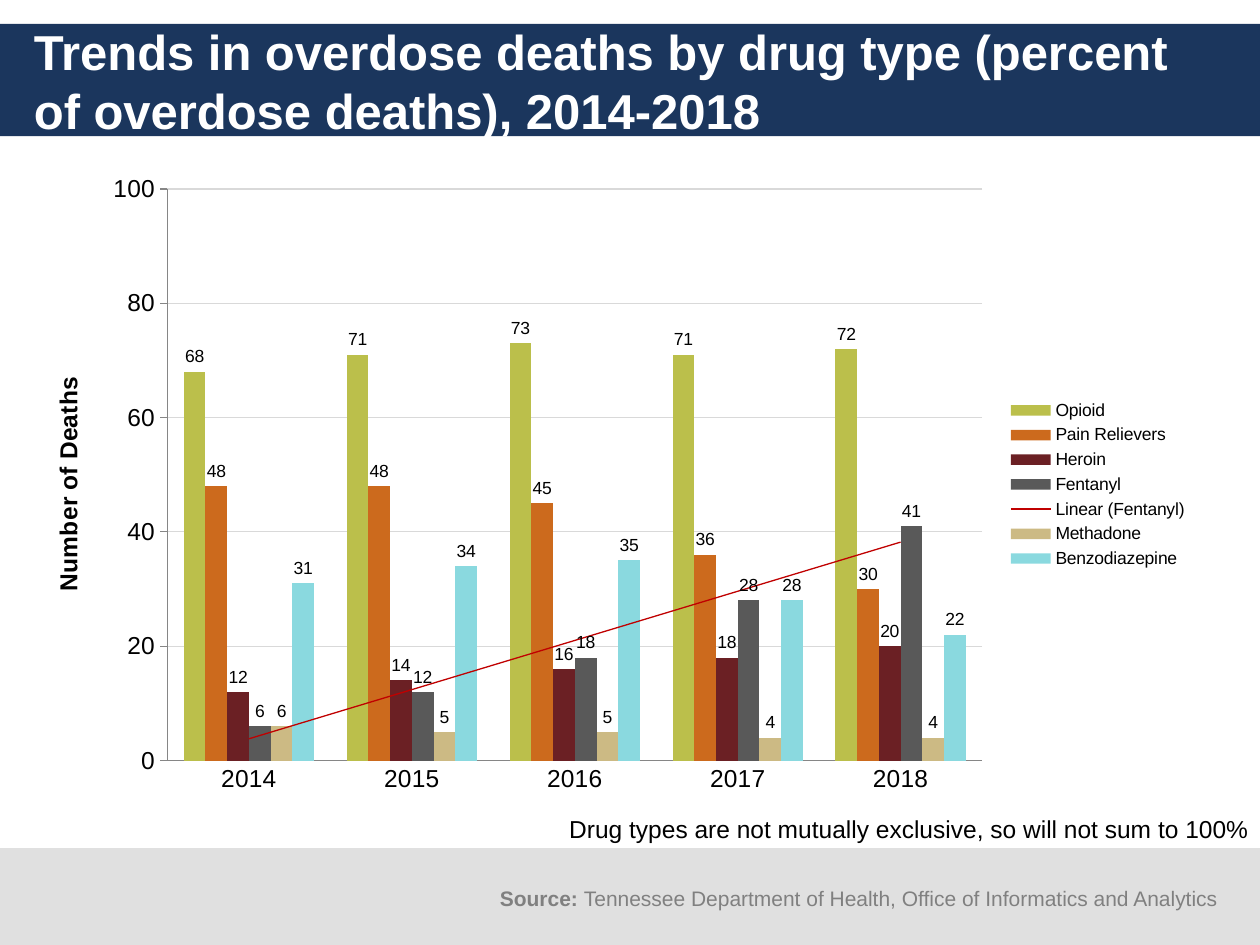
from lxml import etree
from pptx import Presentation
from pptx import util as u
from pptx.chart.data import CategoryChartData
from pptx.dml.color import RGBColor
from pptx.enum import chart as ch, shapes, text
from pptx.oxml import parse_xml
from pptx.oxml.ns import nsdecls

Pt = u.Pt
FONT = "Arial"
NAVY = RGBColor(0x1B, 0x36, 0x5D)
PALE = RGBColor(0xE0, 0xE0, 0xE0)
GRAY = RGBColor(0x80, 0x80, 0x80)
AXIS = RGBColor(0x86, 0x86, 0x86)
GRID = RGBColor(0xD9, 0xD9, 0xD9)
WHITE = RGBColor(0xFF, 0xFF, 0xFF)
BLACK = RGBColor(0, 0, 0)

YEARS = ["2014", "2015", "2016", "2017", "2018"]
DRUGS = [
    ("Opioid ", (68, 71, 73, 71, 72), RGBColor(0xBB, 0xBF, 0x4B)),
    ("Pain Relievers ", (48, 48, 45, 36, 30), RGBColor(0xCC, 0x6A, 0x1D)),
    ("Heroin", (12, 14, 16, 18, 20), RGBColor(0x6B, 0x20, 0x24)),
    ("Fentanyl", (6, 12, 18, 28, 41), RGBColor(0x59, 0x59, 0x59)),
    ("Methadone", (6, 5, 5, 4, 4), RGBColor(0xCC, 0xBA, 0x84)),
    ("Benzodiazepine", (31, 34, 35, 28, 22), RGBColor(0x8A, 0xD9, 0xDF)),
]


def style(font, size, color, bold=False):
    font.name, font.size, font.bold = FONT, Pt(size), bold
    font.color.rgb = color


prs = Presentation()
prs.slide_width, prs.slide_height = Pt(720), Pt(540)
slide = prs.slides.add_slide(prs.slide_layouts[5])

# Bands, kept behind the title
tree = slide.shapes.title.element.getparent()
for spot, (top, high, color) in enumerate([(13.7, 64.1, NAVY), (484.6, 55.4, PALE)]):
    band = slide.shapes.add_shape(
        shapes.MSO_SHAPE.RECTANGLE, Pt(0), Pt(top), Pt(720), Pt(high))
    band.shadow.inherit = False
    band.fill.solid()
    band.fill.fore_color.rgb = color
    band.line.fill.background()
    tree.insert(2 + spot, band.element)

title = slide.shapes.title
title.left, title.top, title.width, title.height = Pt(12.2), Pt(13.7), Pt(696), Pt(64.8)
frame = title.text_frame
frame.text = "Trends in overdose deaths by drug type (percent of overdose deaths), 2014-2018"
frame.word_wrap = True
frame.auto_size = text.MSO_AUTO_SIZE.NONE
frame.vertical_anchor = text.MSO_ANCHOR.MIDDLE
frame.paragraphs[0].alignment = text.PP_ALIGN.LEFT
style(frame.paragraphs[0].runs[0].font, 28, WHITE, True)

# Chart
data = CategoryChartData()
data.categories = YEARS
for name, vals, _ in DRUGS:
    data.add_series(name, vals)
chart = slide.shapes.add_chart(
    ch.XL_CHART_TYPE.COLUMN_CLUSTERED, Pt(14.4), Pt(92.9), Pt(671.8), Pt(367.9), data).chart
style(chart.font, 10, BLACK)
chart.has_title = False
chart.has_legend = True
chart.legend.position = ch.XL_LEGEND_POSITION.RIGHT
chart.legend.include_in_layout = False
style(chart.legend.font, 10, BLACK)

plot = chart.plots[0]
plot.gap_width, plot.overlap = 150, 0
plot.vary_by_categories = False
for bars, (_, _, color) in zip(plot.series, DRUGS):
    bars.format.fill.solid()
    bars.format.fill.fore_color.rgb = color
    bars.invert_if_negative = False
    tags = bars.data_labels
    tags.show_value = True
    tags.position = ch.XL_LABEL_POSITION.OUTSIDE_END
    style(tags.font, 10, BLACK)

trend = parse_xml(
    f'<c:trendline {nsdecls("c", "a")}><c:spPr><a:ln w="9525"><a:solidFill>'
    '<a:srgbClr val="C00000"/></a:solidFill></a:ln></c:spPr>'
    '<c:trendlineType val="linear"/><c:dispRSqr val="0"/><c:dispEq val="0"/></c:trendline>')
tags = plot.series[3].data_labels
tags._element.addnext(trend)

cat, val = chart.category_axis, chart.value_axis
for axis in (cat, val):
    style(axis.tick_labels.font, 14, BLACK)
    axis.format.line.color.rgb = AXIS
    axis.format.line.width = Pt(0.75)
cat.major_tick_mark = ch.XL_TICK_MARK.NONE
val.major_tick_mark = ch.XL_TICK_MARK.OUTSIDE
val.minimum_scale, val.maximum_scale, val.major_unit = 0, 100, 20
val.major_gridlines.format.line.color.rgb = GRID
val.major_gridlines.format.line.width = Pt(0.75)
name = val.axis_title.text_frame
name.text = "Number of Deaths"
style(name.paragraphs[0].runs[0].font, 14, BLACK, True)

# Fixed inner plot area, as fractions of the chart
area = chart._chartSpace.chart.plotArea
for old in area.findall("{*}layout"):
    area.remove(old)
layout = parse_xml(
    f'<c:layout {nsdecls("c")}><c:manualLayout><c:layoutTarget val="inner"/>'
    '<c:xMode val="edge"/><c:yMode val="edge"/></c:manualLayout></c:layout>')
for key, part in (("x", 0.121), ("y", 0.041), ("w", 0.693), ("h", 0.888)):
    item = etree.SubElement(layout[0], layout.tag.replace("layout", key))
    item.set("val", str(part))
area.insert(0, layout)

# Note and source
NOTES = [
    (318.2, 461.5, 408.2, 24.2, 14, BLACK,
     [("Drug types are not mutually exclusive, so will not sum to 100%", False)]),
    (278.6, 502.6, 432, 21.8, 12, GRAY,
     [("Source: ", True),
      ("Tennessee Department of Health, Office of Informatics and Analytics", False)]),
]
for left, top, wide, high, size, color, runs in NOTES:
    box = slide.shapes.add_textbox(Pt(left), Pt(top), Pt(wide), Pt(high))
    box.text_frame.word_wrap = True
    for words, bold in runs:
        run = box.text_frame.paragraphs[0].add_run()
        run.text = words
        style(run.font, size, color, bold)

prs.save("out.pptx")
